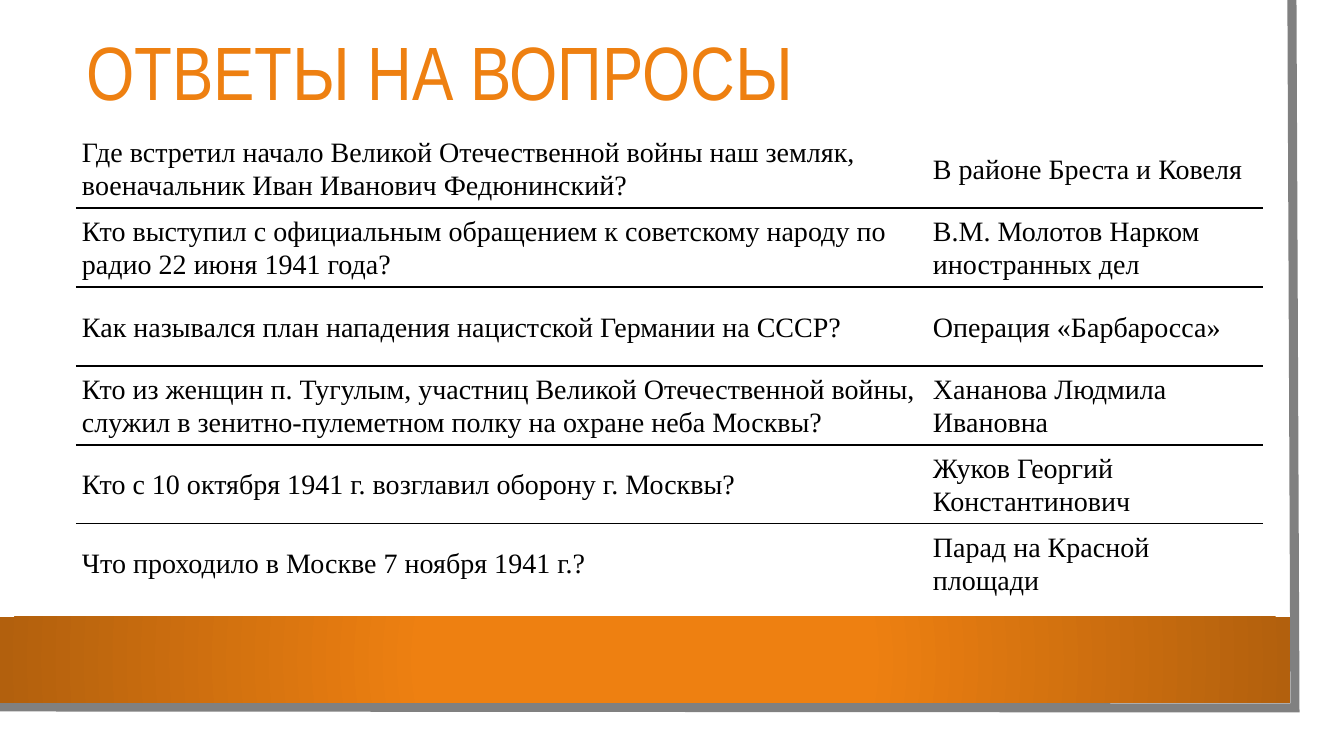
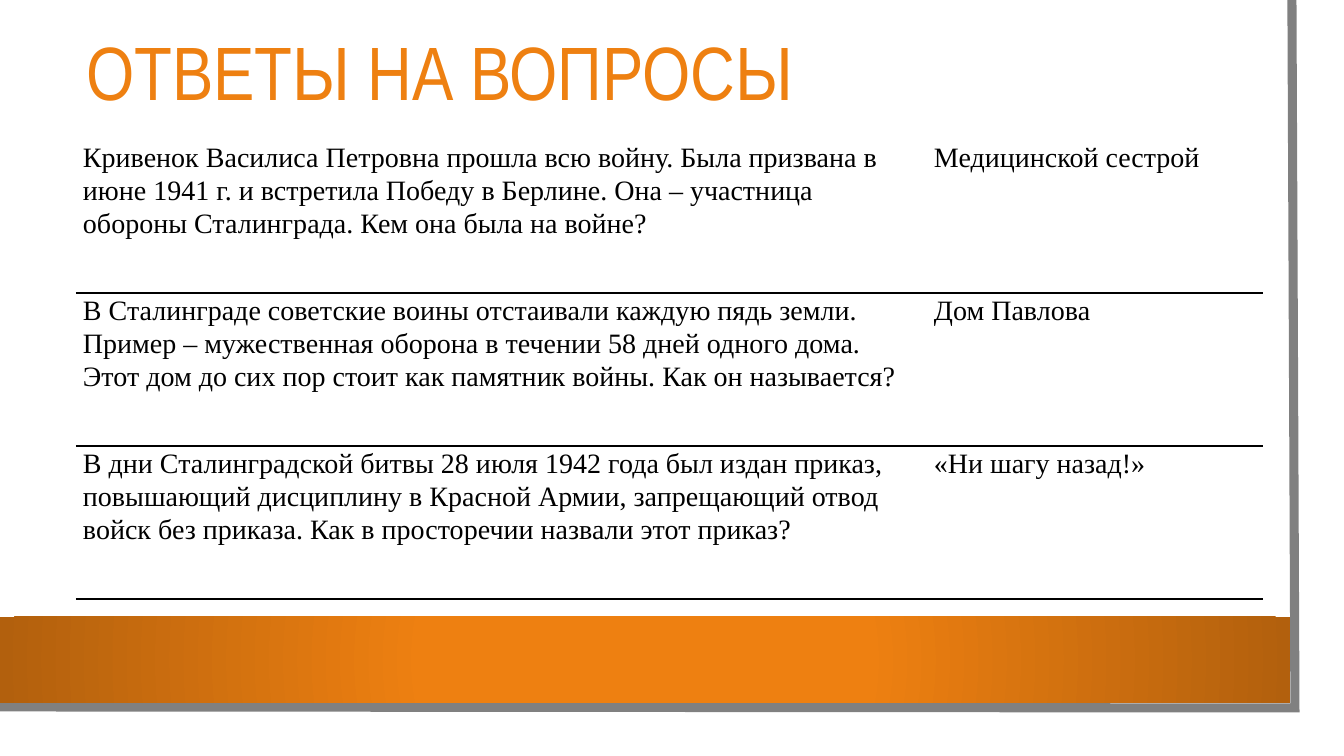
from lxml.etree import SubElement
from pptx import Presentation
from pptx.dml.color import RGBColor
from pptx.enum.shapes import MSO_SHAPE
from pptx.enum.text import MSO_ANCHOR, MSO_AUTO_SIZE, PP_ALIGN
from pptx.oxml import parse_xml
from pptx.oxml.ns import nsdecls, qn
from pptx.util import Pt

ORANGE = RGBColor(0xEE, 0x80, 0x11)
DARK_ORANGE = RGBColor(0xB2, 0x60, 0x0D)
GRAY = RGBColor(0x80, 0x80, 0x80)
BLACK = RGBColor(0, 0, 0)

TITLE = "ОТВЕТЫ НА ВОПРОСЫ"
TITLE_FONT = "Arial Narrow"
BODY_FONT = "Times New Roman"
NO_STYLE = "{2D5ABB26-0587-4C30-8999-92F81FD0307C}"

EMU_PER_PX = 914400 / 100.8
SLIDE_SIZE = (1344, 756)
TITLE_BOX = (76, 13, 1146, 127)
BAND_BOX = (0, 617, 1290, 86)
FRAME_POINTS = [(1292, 0), (1295, 708), (-3, 707)]
TABLE_LEFT = 76
COLUMN_WIDTHS = (851, 336)

QUIZZES = [
    {
        "top": 129, "row_height": 79, "margin": 6,
        "anchor": MSO_ANCHOR.MIDDLE, "last_rule": False,
        "rows": [
            ("Где встретил начало Великой Отечественной войны наш земляк, "
             "военачальник Иван Иванович Федюнинский?",
             "В районе Бреста и Ковеля"),
            ("Кто выступил с официальным обращением к советскому народу по "
             "радио 22 июня 1941 года?",
             "В.М. Молотов Нарком иностранных дел"),
            ("Как назывался план нападения нацистской Германии на СССР?",
             "Операция «Барбаросса»"),
            ("Кто из женщин п. Тугулым, участниц Великой Отечественной войны, "
             "служил в зенитно-пулеметном полку на охране неба Москвы?",
             "Хананова Людмила Ивановна"),
            ("Кто с 10 октября 1941 г. возглавил оборону г. Москвы?",
             "Жуков Георгий Константинович"),
            ("Что проходило в Москве 7 ноября 1941 г.?",
             "Парад на Красной площади"),
        ],
    },
    {
        "top": 140, "row_height": 153, "margin": 7,
        "anchor": MSO_ANCHOR.TOP, "last_rule": True,
        "rows": [
            ("Кривенок Василиса Петровна прошла всю войну. Была призвана в "
             "июне 1941 г. и встретила Победу в Берлине. Она – участница "
             "обороны Сталинграда. Кем она была на войне?",
             "Медицинской сестрой"),
            ("В Сталинграде советские воины отстаивали каждую пядь земли. "
             "Пример – мужественная оборона в течении 58 дней одного дома. "
             "Этот дом до сих пор стоит как памятник войны. Как он называется?",
             "Дом Павлова"),
            ("В дни Сталинградской битвы 28 июля 1942 года был издан приказ, "
             "повышающий дисциплину в Красной Армии, запрещающий отвод "
             "войск без приказа. Как в просторечии назвали этот приказ?",
             "«Ни шагу назад!»"),
        ],
    },
]


def px(length):
    return round(length * EMU_PER_PX)


def write_text(frame, text, *, font, size, color, spacing):
    frame.word_wrap = True
    para = frame.paragraphs[0]
    para.alignment = PP_ALIGN.LEFT
    para.line_spacing = spacing
    span = para.add_run()
    span.text = text
    span.font.name = font
    span.font.size = Pt(size)
    span.font.color.rgb = color


def decorate_layout(layout, page):
    """Draw the frame and band on a page, then move them to its layout."""
    builder = page.shapes.build_freeform(*FRAME_POINTS[0], scale=EMU_PER_PX)
    builder.add_line_segments(FRAME_POINTS[1:], close=False)
    frame = builder.convert_to_shape()
    frame.fill.background()
    frame.line.color.rgb = GRAY
    frame.line.width = Pt(6.5)
    SubElement(frame.line._get_or_add_ln(), qn("a:miter"), lim="800000")

    band = page.shapes.add_shape(MSO_SHAPE.RECTANGLE, *map(px, BAND_BOX))
    band.line.fill.background()
    band.fill.gradient()
    stops = zip(band.fill.gradient_stops, (0.34, 1), (ORANGE, DARK_ORANGE))
    for stop, position, color in stops:
        stop.position = position
        stop.color.rgb = color
    linear = band.element.spPr.find(f".//{qn('a:lin')}")
    linear.getparent().replace(linear, parse_xml(
        f'<a:path {nsdecls("a")} path="circle">'
        '<a:fillToRect l="50000" t="50000" r="50000" b="50000"/></a:path>'))

    for index, shape in enumerate((frame, band)):
        shape.shadow.inherit = False
        shape.element.nvSpPr.cNvPr.set("id", str(100 + index))
        layout.shapes.element.insert(2 + index, shape.element)


def add_title(page):
    title = page.shapes.title
    title.left, title.top, title.width, title.height = map(px, TITLE_BOX)
    title.text_frame.auto_size = MSO_AUTO_SIZE.NONE
    title.text_frame.vertical_anchor = MSO_ANCHOR.MIDDLE
    write_text(title.text_frame, TITLE, font=TITLE_FONT, size=54,
               color=ORANGE, spacing=0.9)


def rule_below(cell):
    cell._tc.get_or_add_tcPr().insert(0, parse_xml(
        f'<a:lnB {nsdecls("a")} w="12700"><a:solidFill>'
        f'<a:srgbClr val="{BLACK}"/></a:solidFill></a:lnB>'))


def add_quiz(page, quiz):
    rows = quiz["rows"]
    graphic = page.shapes.add_table(
        len(rows), len(COLUMN_WIDTHS), px(TABLE_LEFT), px(quiz["top"]),
        px(sum(COLUMN_WIDTHS)), px(quiz["row_height"] * len(rows)))
    table = graphic.table
    table.first_row = table.horz_banding = False
    table._tbl.tblPr.find(qn("a:tableStyleId")).text = NO_STYLE
    for column, width in zip(table.columns, COLUMN_WIDTHS):
        column.width = px(width)
    for row_index, texts in enumerate(rows):
        table.rows[row_index].height = px(quiz["row_height"])
        for column_index, text in enumerate(texts):
            cell = table.cell(row_index, column_index)
            cell.fill.background()
            cell.margin_left = cell.margin_right = px(quiz["margin"])
            cell.margin_top = cell.margin_bottom = 0
            cell.vertical_anchor = quiz["anchor"]
            write_text(cell.text_frame, text, font=BODY_FONT, size=20,
                       color=BLACK, spacing=1.07)
            if row_index < len(rows) - 1 or quiz["last_rule"]:
                rule_below(cell)


def main():
    deck = Presentation()
    deck.slide_width, deck.slide_height = map(px, SLIDE_SIZE)
    layout = deck.slide_layouts.get_by_name("Title Only")
    pages = [deck.slides.add_slide(layout) for _ in QUIZZES]
    decorate_layout(layout, pages[0])
    for page, quiz in zip(pages, QUIZZES):
        add_title(page)
        add_quiz(page, quiz)
    deck.save("out.pptx")


if __name__ == "__main__":
    main()
